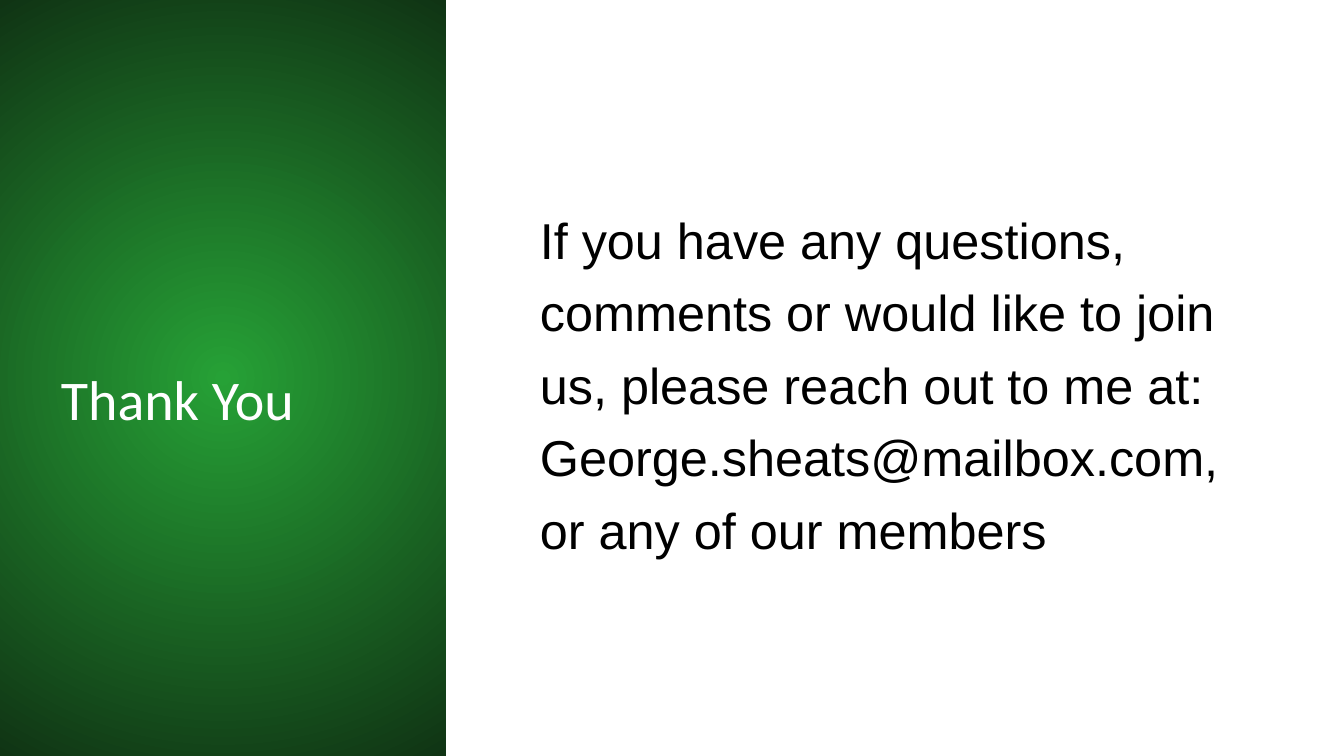
from lxml import etree
from pptx import Presentation
from pptx.dml.color import RGBColor
from pptx.enum.shapes import MSO_SHAPE
from pptx.enum.text import MSO_ANCHOR
from pptx.oxml.ns import qn
from pptx.util import Pt

EMU_PER_PX = 914400 / 100.8
SLIDE_WIDTH, SLIDE_HEIGHT = 1344, 756
PANEL_WIDTH = 446
COLOURS = {
    "background": "FFFFFF",
    "panel_centre": "26A136",
    "panel_edge": "103414",
    "title": "FFFFFF",
    "body": "000000",
}


def px(length):
    return round(length * EMU_PER_PX)


def colour(name):
    return RGBColor.from_string(COLOURS[name])


def set_radial_fill(shape, centre, edge):
    """Turn the fill into a circular gradient around the shape's centre."""
    shape.fill.gradient()
    first, last = shape.fill.gradient_stops
    first.color.rgb, first.position = colour(centre), 0
    last.color.rgb, last.position = colour(edge), 1
    gradient = shape._element.spPr.find(qn("a:gradFill"))
    gradient.remove(gradient.find(qn("a:lin")))
    circle = etree.SubElement(gradient, qn("a:path"), {"path": "circle"})
    etree.SubElement(circle, qn("a:fillToRect"),
                     {side: "50000" for side in "ltrb"})


def add_text(slide, box, text, font, size, colour_name, anchor, spacing):
    text_box = slide.shapes.add_textbox(*map(px, box))
    frame = text_box.text_frame
    frame.word_wrap = True
    frame.vertical_anchor = anchor
    paragraph = frame.paragraphs[0]
    paragraph.line_spacing = spacing
    run = paragraph.add_run()
    run.text = text
    run.font.name, run.font.size = font, Pt(size)
    run.font.color.rgb = colour(colour_name)


def add_title_panel(slide, left, top, width, height):
    # Green panel
    panel = slide.shapes.add_shape(
        MSO_SHAPE.RECTANGLE, *map(px, (left, top, width, height)))
    panel.shadow.inherit = False
    panel.line.fill.background()
    set_radial_fill(panel, "panel_centre", "panel_edge")
    # Title
    add_text(slide, (left + 51, top + 65, width - 93, 373), "Thank You",
             "Calibri", 40, "title", MSO_ANCHOR.BOTTOM, 0.9)


def add_contact_message(slide, left, top, width, height):
    add_text(slide, (left + 84, top + 72, width - 175, height - 144),
             "If you have any questions, comments or would like to join us, "
             "please reach out to me at: George.sheats@mailbox.com, "
             "or any of our members",
             "Arial", 36, "body", MSO_ANCHOR.MIDDLE, 1.2)


def main():
    presentation = Presentation()
    presentation.slide_width = px(SLIDE_WIDTH)
    presentation.slide_height = px(SLIDE_HEIGHT)
    slide = presentation.slides.add_slide(presentation.slide_layouts[6])
    slide.background.fill.solid()
    slide.background.fill.fore_color.rgb = colour("background")
    add_title_panel(slide, 0, 0, PANEL_WIDTH, SLIDE_HEIGHT)
    add_contact_message(slide, PANEL_WIDTH, 0,
                        SLIDE_WIDTH - PANEL_WIDTH, SLIDE_HEIGHT)
    presentation.save("out.pptx")


if __name__ == "__main__":
    main()
